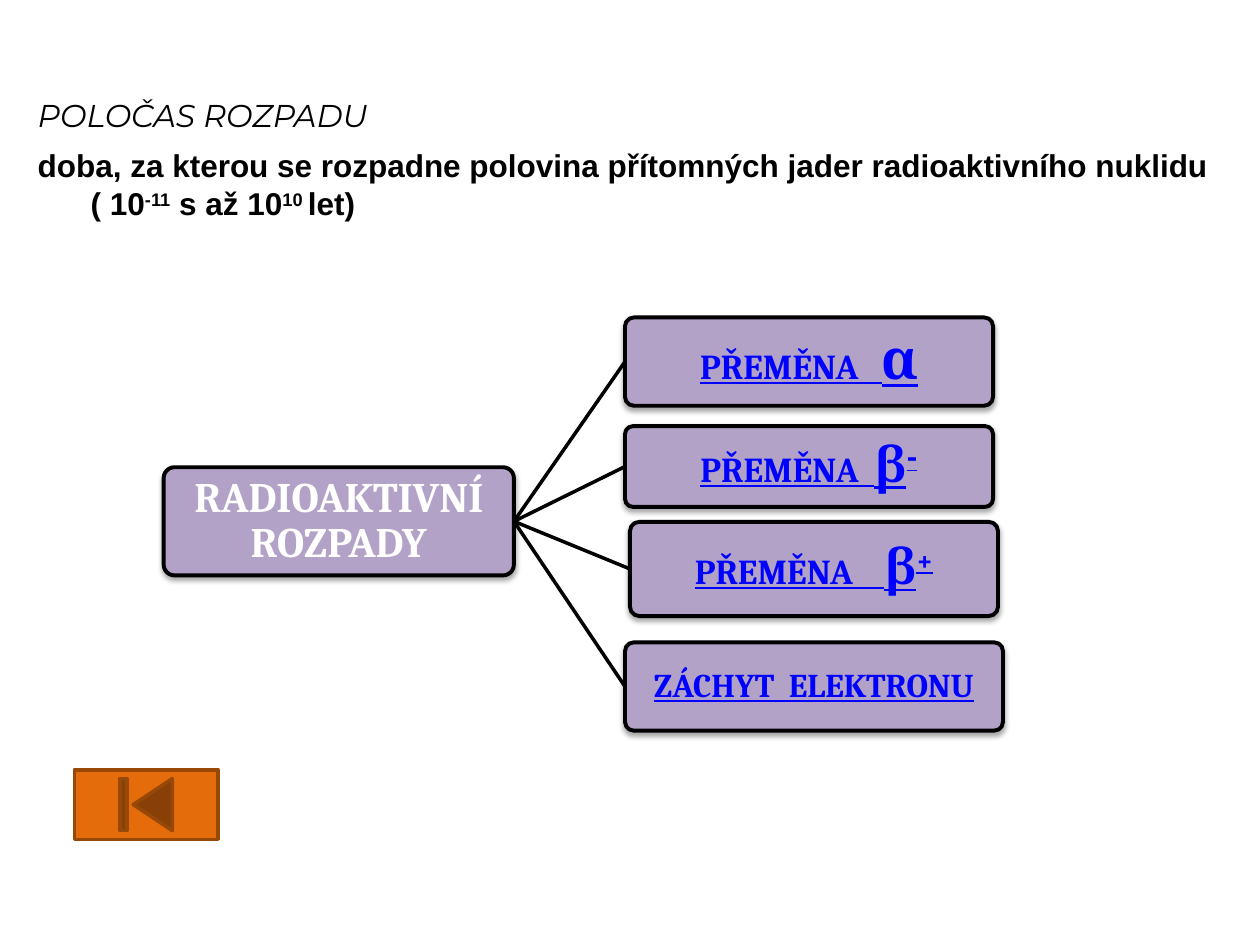
from lxml import etree
from pptx import Presentation
from pptx.dml.color import RGBColor
from pptx.enum.shapes import MSO_CONNECTOR as CONN, MSO_SHAPE as SHAPE
from pptx.enum.text import MSO_ANCHOR as ANCHOR, PP_ALIGN as ALIGN
from pptx.oxml.ns import qn
from pptx.util import Cm, Pt

COLORS = {
    "black": "000000", "white": "FFFFFF", "link": "0000FF",
    "purple": "B3A2C7", "orange": "E46C0A", "brown": "984807",
}


def add_run(p, text, size=18, font="Arial", color="black", bold=True,
            italic=False, underline=False, raised=False):
    r = p.add_run()
    r.text = text
    r.font.size = Pt(size)
    r.font.name = font
    r.font.bold = bold
    r.font.italic = italic
    r.font.underline = underline
    r.font.color.rgb = RGBColor.from_string(COLORS[color])
    if raised:
        r._r.get_or_add_rPr().set("baseline", "30000")


def add_box(s, left, top, width, height, runs, inset):
    sp = s.shapes.add_shape(SHAPE.ROUNDED_RECTANGLE, Cm(left), Cm(top), Cm(width), Cm(height))
    sp.adjustments[0] = 0.1
    sp.fill.solid()
    sp.fill.fore_color.rgb = RGBColor.from_string(COLORS["purple"])
    sp.line.color.rgb = RGBColor.from_string(COLORS["black"])
    sp.line.width = Pt(2.25)
    sp.shadow.inherit = False
    effects = sp._element.spPr.find(qn("a:effectLst"))
    shadow = etree.SubElement(effects, qn("a:outerShdw"), blurRad=str(Pt(3.1)),
                              dist=str(Pt(1.8)), dir="5400000", rotWithShape="0")
    clr = etree.SubElement(shadow, qn("a:srgbClr"), val=COLORS["black"])
    etree.SubElement(clr, qn("a:alpha"), val="35000")
    tf = sp.text_frame
    tf.word_wrap = True
    tf.vertical_anchor = ANCHOR.MIDDLE
    tf.margin_left = tf.margin_right = tf.margin_top = tf.margin_bottom = Cm(inset)
    p = tf.paragraphs[0]
    p.alignment = ALIGN.CENTER
    p.line_spacing = 0.9
    for text, fmt in runs:
        add_run(p, text, **fmt)


prs = Presentation()
prs.slide_width, prs.slide_height = Cm(25.4), Cm(19.05)
s = prs.slides.add_slide(prs.slide_layouts[6])

tf = s.shapes.add_textbox(Cm(0.51), Cm(1.8), Cm(24.56), Cm(2.82)).text_frame
tf.word_wrap = False
tf.vertical_anchor = ANCHOR.MIDDLE
add_run(tf.paragraphs[0], "POLOČAS ROZPADU", font="Montserrat", bold=False, italic=True)
p = tf.add_paragraph()
p.space_before = Pt(7)
add_run(p, "doba, za kterou se rozpadne polovina přítomných jader radioaktivního nuklidu")
p = tf.add_paragraph()
p._p.get_or_add_pPr().set("marL", str(Cm(1.07)))
for text, raised in [("( 10", False), ("-11", True), (" s\u00a0až 10", False),
                     ("10 ", True), ("let)", False)]:
    add_run(p, text, raised=raised)

root_left, root_top, root_width, root_height = 3.3, 9.42, 7.06, 2.18
title = dict(size=24, font="Cambria", color="white")
add_box(s, root_left, root_top, root_width, root_height,
        [("RADIOAKTIVNÍ ROZPADY", title)], 0.05)

link = dict(size=20, font="Cambria", color="link", underline=True)
beta = {**link, "size": 28}
decays = [
    (12.6, 6.4, 7.42, 1.78, [("PŘEMĚNA   ", link), ("α", {**link, "size": 32})]),
    (12.6, 8.59, 7.42, 1.63, [("PŘEMĚNA  ", link), ("β", beta),
                              ("-", {**beta, "font": "Montserrat", "raised": True})]),
    (12.7, 10.52, 7.42, 1.9, [("PŘEMĚNA    ", link), ("β", beta),
                              ("+", {**beta, "raised": True})]),
    (12.6, 12.95, 7.62, 1.78, [("ZÁCHYT  ELEKTRONU", {**link, "size": 19})]),
]
for left, top, width, height, runs in decays:
    branch = s.shapes.add_connector(
        CONN.STRAIGHT, Cm(root_left + root_width), Cm(root_top + root_height / 2),
        Cm(left), Cm(top + height / 2))
    branch.line.color.rgb = RGBColor.from_string(COLORS["black"])
    branch.line.width = Pt(2)
    etree.SubElement(branch._element.spPr, qn("a:effectLst"))
    add_box(s, left, top, width, height, runs, 0.03)

button = s.shapes.add_shape(SHAPE.ACTION_BUTTON_BEGINNING, Cm(1.5), Cm(15.52), Cm(2.9), Cm(1.4))
button.shadow.inherit = False
button.fill.solid()
button.fill.fore_color.rgb = RGBColor.from_string(COLORS["orange"])
button.line.color.rgb = RGBColor.from_string(COLORS["brown"])
button.line.width = Pt(2)

prs.save("out.pptx")
